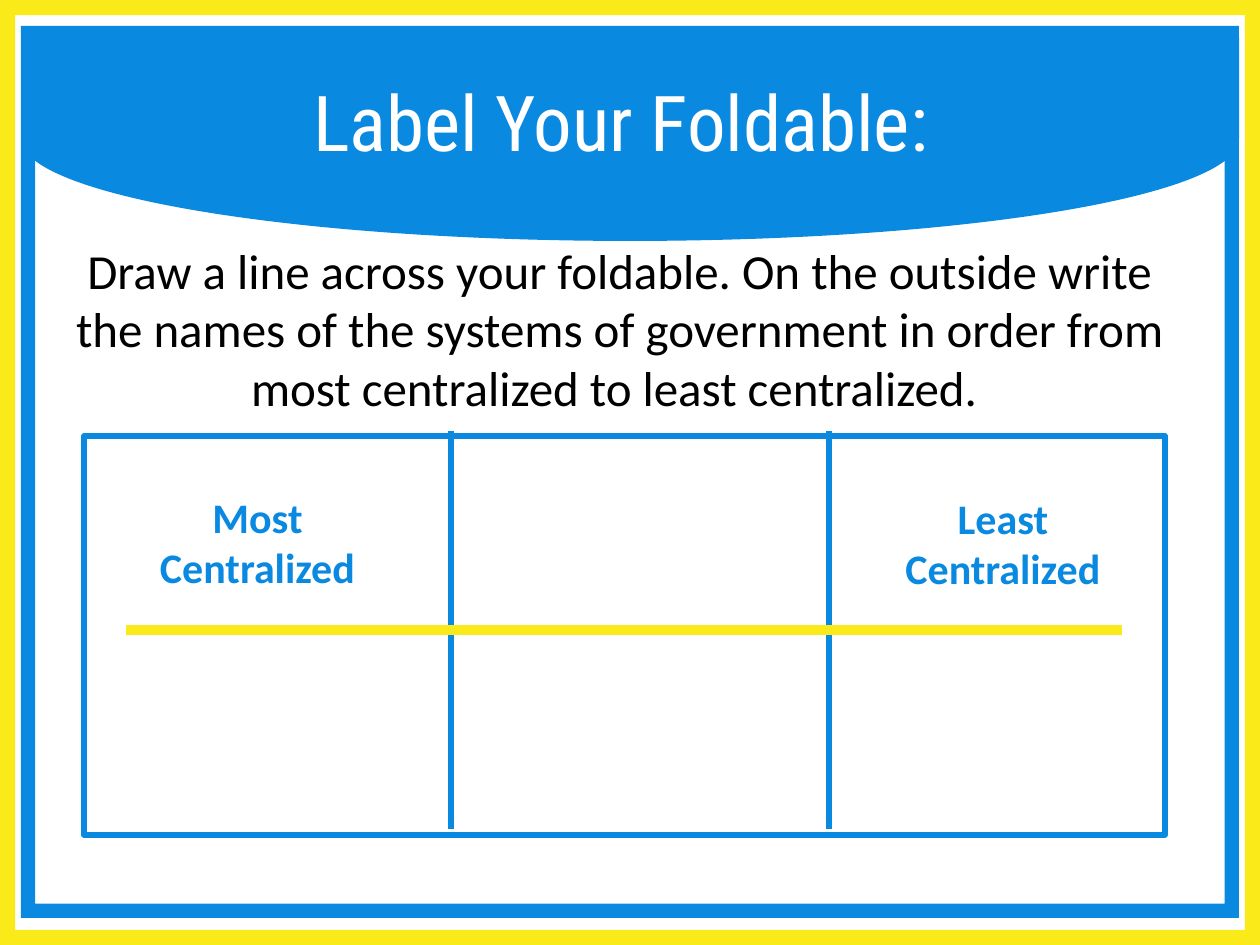
import dataclasses

import pptx
import pptx.dml.color
import pptx.enum.shapes
import pptx.enum.text
import pptx.oxml.ns
import pptx.util
from lxml import etree

SHAPE = pptx.enum.shapes.MSO_SHAPE
ANCHOR = pptx.enum.text.MSO_ANCHOR


@dataclasses.dataclass(frozen=True)
class Theme:
    blue: str = "0A89E0"
    yellow: str = "FAEA1A"
    white: str = "FFFFFF"
    black: str = "000000"
    title_font: str = "Roboto Condensed"
    body_font: str = "Calibri"
    title_size: int = 44
    body_size: int = 28
    label_size: int = 24
    fold_width: int = 3
    cut_width: int = 6


THEME = Theme()


def px(length):
    """Turn px (126 to the inch) into EMU."""
    return pptx.util.Emu(round(length * 914400 / 126))


def rgb(color):
    return pptx.dml.color.RGBColor.from_string(color)


def add_solid(slide, kind, box, color):
    solid = slide.shapes.add_shape(kind, *map(px, box))
    solid.shadow.inherit = False
    solid.fill.solid()
    solid.fill.fore_color.rgb = rgb(color)
    solid.line.fill.background()
    return solid


def add_line(slide, start, end, color, width):
    line = slide.shapes.add_connector(
        pptx.enum.shapes.MSO_CONNECTOR.STRAIGHT, *map(px, start + end))
    line.line.color.rgb = rgb(color)
    line.line.width = pptx.util.Pt(width)
    etree.SubElement(line._element.spPr, pptx.oxml.ns.qn("a:effectLst"))


def write(frame, wording, font, size, color, bold=False, anchor=ANCHOR.TOP):
    frame.word_wrap = True
    frame.auto_size = pptx.enum.text.MSO_AUTO_SIZE.NONE
    frame.vertical_anchor = anchor
    paragraph = frame.paragraphs[0]
    paragraph.alignment = pptx.enum.text.PP_ALIGN.CENTER
    run = paragraph.add_run()
    run.text = wording
    run.font.name = font
    run.font.size = pptx.util.Pt(size)
    run.font.bold = bold
    run.font.color.rgb = rgb(color)


def add_text(slide, box, wording, size, color, bold=False):
    words = slide.shapes.add_textbox(*map(px, box))
    write(words.text_frame, wording, THEME.body_font, size, color, bold)


def build_border(slide, box):
    """Rounded header band under a yellow and a blue frame."""
    left, top, width, height = box
    inner = (left + 21, top + 26, width - 42, height - 53)
    # The band is a half-round shape turned to point down
    depth, span = 204, inner[2]
    middle_x, middle_y = left + width / 2, top + 139
    band = add_solid(slide, SHAPE.FLOWCHART_DELAY,
                     (middle_x - depth / 2, middle_y - span / 2, depth, span),
                     THEME.blue)
    band.rotation = 90
    for frame_box, color in ((box, THEME.yellow), (inner, THEME.blue)):
        frame = add_solid(slide, SHAPE.FRAME, frame_box, color)
        frame.adjustments[0] = 0.016


def build_title(slide, box, wording):
    title = slide.shapes.title
    title.left, title.top, title.width, title.height = map(px, box)
    write(title.text_frame, wording, THEME.title_font, THEME.title_size,
          THEME.white, anchor=ANCHOR.MIDDLE)
    # Bring the title in front of the header band
    slide.shapes._spTree.append(title._element)


def build_foldable(slide, box):
    """Paper outline, two folds, the line to draw and the end labels."""
    left, top, width, height = box
    paper = slide.shapes.add_shape(SHAPE.RECTANGLE, *map(px, box))
    paper.shadow.inherit = False
    paper.fill.background()
    paper.line.color.rgb = rgb(THEME.blue)
    paper.line.width = pptx.util.Pt(THEME.fold_width)

    for fold in (left + 745, left + 367):
        add_line(slide, (fold, top - 5), (fold, top + height - 6),
                 THEME.blue, THEME.fold_width)
    add_line(slide, (left + 42, top + 194), (left + width - 43, top + 194),
             THEME.yellow, THEME.cut_width)

    labels = (("Most Centralized", 32, 49, 283),
              ("Least Centralized", 767, 50, 304))
    for wording, dx, dy, label_width in labels:
        add_text(slide, (left + dx, top + dy, label_width, 115), wording,
                 THEME.label_size, THEME.blue, bold=True)


def main():
    deck = pptx.Presentation()
    deck.slide_width, deck.slide_height = px(1260), px(945)
    slide = deck.slides.add_slide(deck.slide_layouts.get_by_name("Title Only"))

    build_border(slide, (0, 0, 1260, 945))
    build_title(slide, (63, 42, 1134, 157), "Label Your Foldable: ")
    build_foldable(slide, (84, 436, 1081, 399))
    # Instructions
    add_text(slide, (63, 234, 1113, 251),
             "Draw a line across your foldable. On the outside write the names "
             "of the systems of government in order from most centralized to "
             "least centralized. ", THEME.body_size, THEME.black)

    deck.save("out.pptx")


if __name__ == "__main__":
    main()
